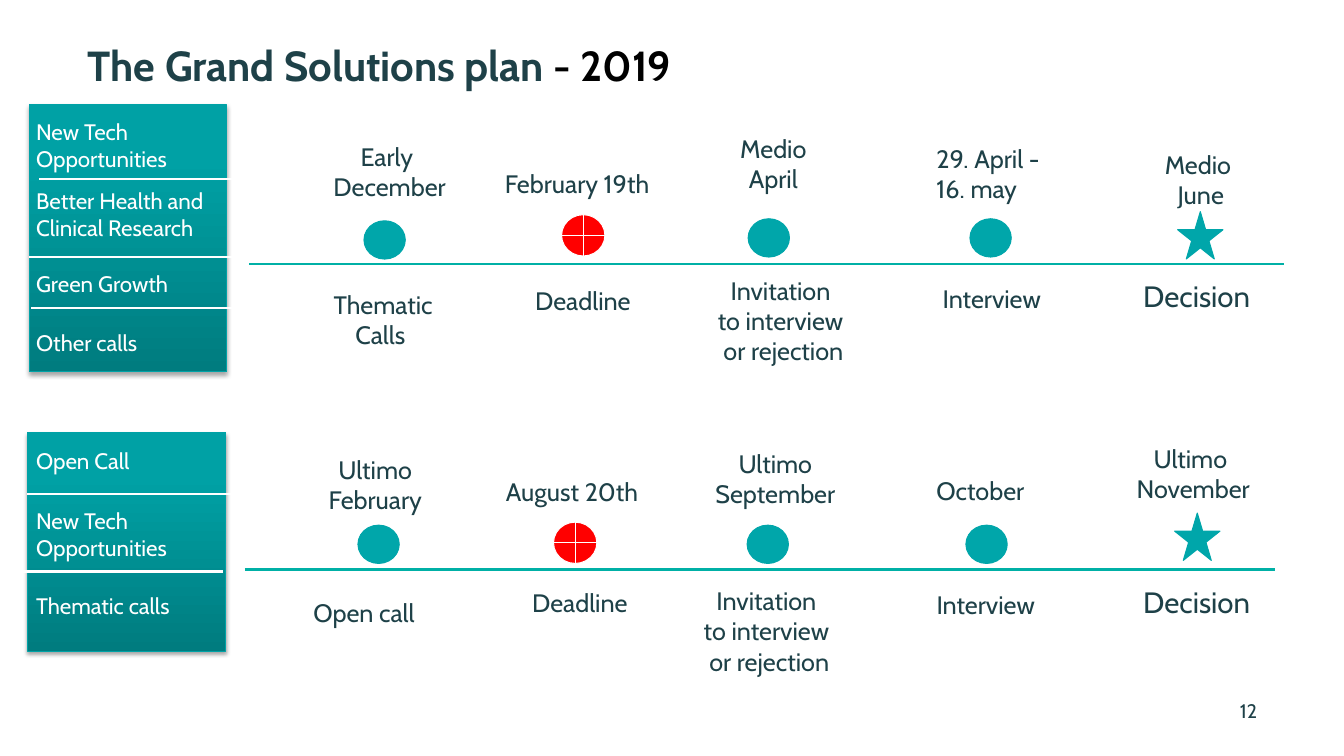
from pptx import Presentation
from pptx.dml.color import RGBColor
from pptx.enum.shapes import MSO_CONNECTOR as Connector, MSO_SHAPE as Preset
from pptx.enum.text import MSO_ANCHOR as Anchor, MSO_AUTO_SIZE as AutoSize, PP_ALIGN as Align
from pptx.oxml import parse_xml
from pptx.oxml.ns import nsdecls, qn
from pptx.util import Pt

PX = 9144  # one px is a hundredth of an inch
FONT = "Cabin"
COLORS = {
    "ink": "1E4148", "black": "000000", "white": "FFFFFF", "red": "FF0000",
    "teal": "00A6AA", "axis": "00B0A6", "edge": "00A2A6",
    "deep": "007C7F", "mid": "00A1A5", "light": "00A2A5",
}
AXIS_Y = 150  # height of the axis within a timeline box

# Preset, width, height, fill, line
MARKERS = {
    "step": (Preset.OVAL, 41, 38, "teal", "teal"),
    "deadline": (Preset.FLOWCHART_OR, 43, 41, "red", "white"),
    "decision": (Preset.STAR_5_POINT, 45, 47, "teal", "teal"),
}


def color(name):
    return RGBColor.from_string(COLORS[name])


def style_span(span, size, ink, bold):
    span.font.name = FONT
    span.font.size = Pt(size)
    span.font.bold = bold
    span.font.color.rgb = color(ink)


def add_text(page, text, left, top, width, height=None, size=18, ink="ink", bold=False,
             align=Align.LEFT, wrap=False, inset=True, anchor=Anchor.TOP):
    lines = text.split("\n")
    grows = height is None
    if grows:
        height = round(len(lines) * size * 5 / 3) + 10
    box = page.shapes.add_textbox(left * PX, top * PX, width * PX, height * PX)
    frame = box.text_frame
    frame.word_wrap = wrap
    frame.vertical_anchor = anchor
    frame.auto_size = AutoSize.SHAPE_TO_FIT_TEXT if grows else AutoSize.NONE
    if not inset:
        frame.margin_left = frame.margin_right = 0
        frame.margin_top = frame.margin_bottom = 0
    for index, line in enumerate(lines):
        para = frame.add_paragraph() if index else frame.paragraphs[0]
        para.alignment = align
        span = para.add_run()
        span.text = line
        style_span(span, size, ink, bold)
    return frame


def add_line(page, left, top, width, ink, weight):
    line = page.shapes.add_connector(
        Connector.STRAIGHT, left * PX, top * PX, (left + width) * PX, top * PX)
    line.line.color.rgb = color(ink)
    line.line.width = Pt(weight)
    line._element.spPr.append(parse_xml(f"<a:effectLst {nsdecls('a')}/>"))


def add_preset(page, preset, left, top, width, height, fill, edge):
    shape = page.shapes.add_shape(preset, left * PX, top * PX, width * PX, height * PX)
    shape.fill.solid()
    shape.fill.fore_color.rgb = color(fill)
    shape.line.color.rgb = color(edge)
    shape.line.width = Pt(0.75)
    shape.shadow.inherit = False
    return shape


def add_title(page, left, top, width, height):
    frame = add_text(page, "The Grand Solutions plan ", left, top, width, height,
                     size=30, bold=True, wrap=True, inset=False)
    year = frame.paragraphs[0].add_run()
    year.text = "- 2019"
    style_span(year, 30, "black", True)


def add_call_panel(page, left, top, width, height, dividers, calls):
    panel = add_preset(page, Preset.RECTANGLE, left, top, width, height, "mid", "edge")
    properties = panel._element.spPr
    # Gradient from the dark bottom to the light top
    stops = "".join(
        f'<a:gs pos="{place}000"><a:srgbClr val="{COLORS[name]}"/></a:gs>'
        for place, name in ((0, "deep"), (80, "mid"), (100, "light")))
    properties.replace(properties.find(qn("a:solidFill")), parse_xml(
        f'<a:gradFill {nsdecls("a")} rotWithShape="1"><a:gsLst>{stops}</a:gsLst>'
        '<a:lin ang="16200000" scaled="0"/></a:gradFill>'))
    # Soft shadow below
    properties.find(qn("a:effectLst")).append(parse_xml(
        f'<a:outerShdw {nsdecls("a")} blurRad="{Pt(3.1)}" dist="{Pt(1.8)}" dir="5400000" '
        f'rotWithShape="0"><a:srgbClr val="{COLORS["black"]}"><a:alpha val="35000"/>'
        '</a:srgbClr></a:outerShdw>'))
    for x, y in dividers:
        add_line(page, left + x, top + y, 208, "white", 1.5)
    for text, y, call_width, wrap in calls:
        add_text(page, text, 26, top + y, call_width, size=16, ink="white", wrap=wrap)


def add_timeline(page, left, top, width, markers, labels):
    add_line(page, left, top + AXIS_Y, width, "axis", 2)
    for kind, x, y in markers:
        preset, marker_width, marker_height, fill, edge = MARKERS[kind]
        add_preset(page, preset, left + x, top + y, marker_width, marker_height, fill, edge)
    for text, x, y, label_width, align, wrap in labels:
        size = 21 if text == "Decision" else 18
        add_text(page, text, left + x, top + y, label_width, size=size, align=align, wrap=wrap)


def build_plan(page):
    add_title(page, 87, 39, 1161, 51)
    start, middle = Align.LEFT, Align.CENTER
    invitation = "Invitation \nto interview \nor rejection"

    # Spring round
    add_call_panel(
        page, 29, 104, 196, 265,
        dividers=[(10, 74), (0, 151), (2, 202)],
        calls=[
            ("New Tech Opportunities", 8, 177, True),
            ("Better Health and Clinical Research", 77, 216, True),
            ("Green Growth", 159, 169, False),
            ("Other calls", 218, 130, False),
        ])
    add_timeline(
        page, 247, 112, 1027,
        markers=[("step", 114, 107), ("deadline", 310, 101), ("step", 495, 105),
                 ("step", 715, 105), ("decision", 921, 98)],
        labels=[
            ("Early \nDecember", 71, 23, 137, middle, False),
            ("Thematic\nCalls ", 23, 170, 220, middle, True),
            ("February 19th", 244, 50, 333, start, True),
            ("Deadline", 274, 166, 120, start, False),
            ("Medio\nApril", 378, 15, 284, middle, True),
            (invitation, 388, 156, 284, middle, True),
            ("29. April -\n16. may", 672, 25, 127, start, False),
            ("Interview", 678, 164, 121, start, False),
            ("Medio \nJune", 896, 31, 96, middle, False),
            ("Decision", 877, 159, 200, start, True),
        ])

    # Autumn round
    add_call_panel(
        page, 27, 429, 197, 217,
        dividers=[(0, 61), (-14, 138)],
        calls=[
            ("Open Call", 10, 119, False),
            ("New Tech Opportunities", 69, 194, True),
            ("Thematic calls", 154, 164, False),
        ])
    add_timeline(
        page, 243, 415, 1022,
        markers=[("step", 112, 106), ("deadline", 306, 103), ("step", 498, 106),
                 ("step", 715, 106), ("decision", 922, 94)],
        labels=[
            ("Ultimo \nFebruary ", 68, 31, 128, middle, False),
            ("Open call", 58, 173, 134, start, False),
            ("August 20th", 249, 53, 162, start, False),
            ("Deadline", 275, 163, 120, start, False),
            ("Ultimo\nSeptember", 384, 25, 284, middle, True),
            (invitation, 378, 161, 284, middle, True),
            ("October", 676, 52, 117, start, False),
            ("Interview", 676, 165, 121, start, False),
            ("Ultimo \nNovember", 872, 20, 137, middle, False),
            ("Decision", 881, 160, 200, start, True),
        ])

    # Page number
    add_text(page, "12", 1204, 685, 43, 40, size=14, align=Align.RIGHT, wrap=True,
             inset=False, anchor=Anchor.MIDDLE)


def main():
    deck = Presentation()
    deck.slide_width = 1333 * PX
    deck.slide_height = 750 * PX
    build_plan(deck.slides.add_slide(deck.slide_layouts[6]))
    deck.save("out.pptx")


if __name__ == "__main__":
    main()
